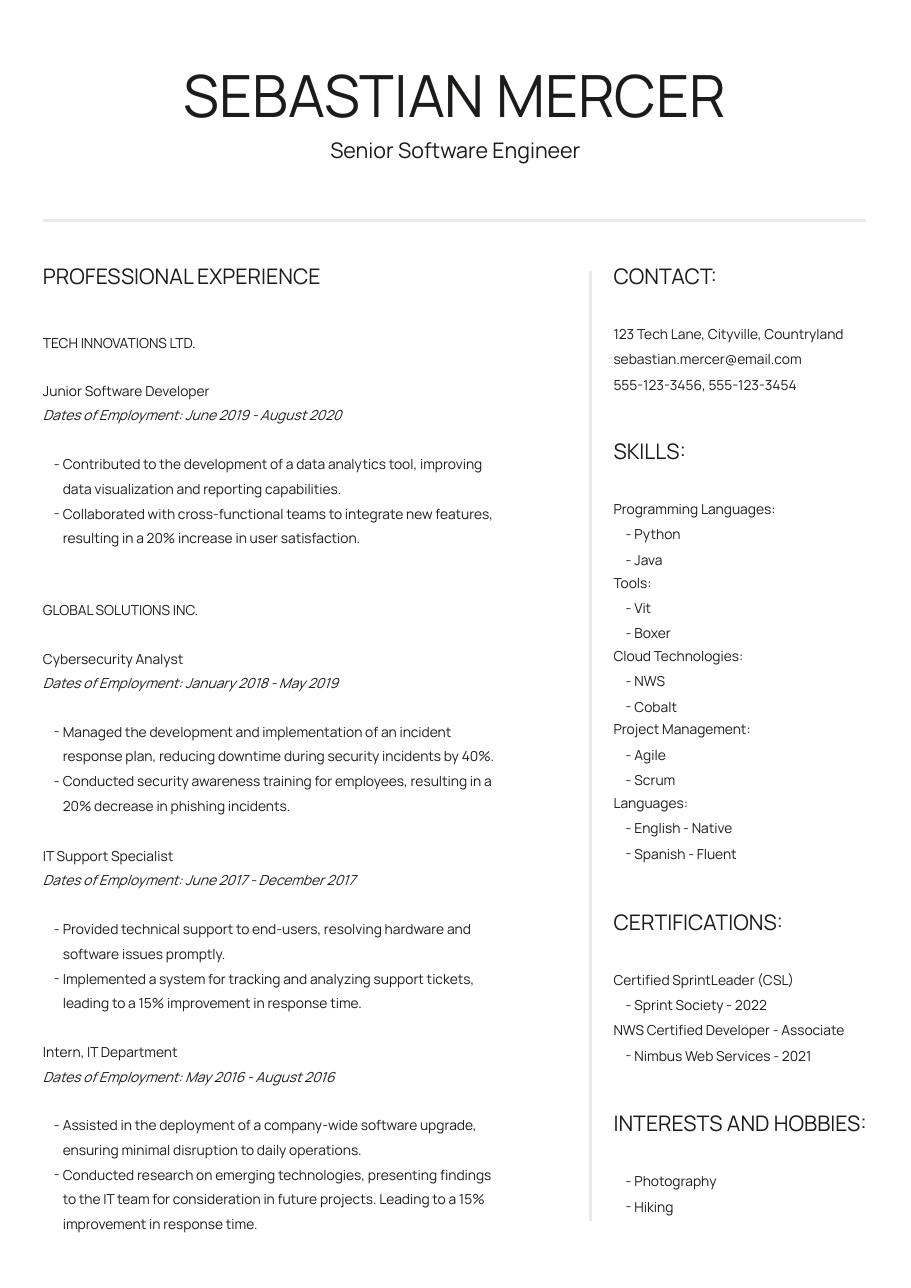
from dataclasses import dataclass

from lxml import etree
from pptx import Presentation
from pptx.dml.color import RGBColor
from pptx.enum.shapes import MSO_CONNECTOR
from pptx.enum.text import MSO_AUTO_SIZE, PP_ALIGN
from pptx.oxml.ns import qn
from pptx.util import Inches, Pt

STRAIGHT = MSO_CONNECTOR.STRAIGHT
GROW = MSO_AUTO_SIZE.SHAPE_TO_FIT_TEXT
LEFT, CENTER = PP_ALIGN.LEFT, PP_ALIGN.CENTER


@dataclass(frozen=True)
class Theme:
    font: str = "Manrope"
    ink: RGBColor = RGBColor(0x1B, 0x1B, 0x1A)
    rule: RGBColor = RGBColor(0xEA, 0xEA, 0xEA)
    rule_width: float = 1.5
    name_size: int = 38
    heading_size: int = 14
    body_size: int = 9
    body_spacing: float = 1.5


@dataclass(frozen=True)
class Job:
    top: float
    title: str
    dates: str
    duties: tuple[str, ...]
    duties_height: float = 0.83
    employer: str = ""


@dataclass(frozen=True)
class Skill:
    area: str
    items: tuple[str, ...]


THEME = Theme()

# Page grid in inches
MAIN_LEFT, MAIN_WIDTH = 0.39, 4.72
DUTY_LEFT, DUTY_WIDTH, DUTY_RIGHT_INSET = 0.49, 4.62, 0.57
SIDE_LEFT, SIDE_WIDTH = 5.57, 2.4
ITEM_LEFT, ITEM_WIDTH = 5.68, 1.98
HEADING_HEIGHT, LINE_HEIGHT = 0.24, 0.15
DASH_INDENT = 0.08
ROW_STEP = 0.23
SKILL_STEP = 2 / 3
EMPLOYER_OFFSET, DATES_OFFSET, DUTIES_OFFSET = -0.44, 0.22, 0.66

JOBS = (
    Job(3.4, "Junior Software Developer", "June 2019 - August 2020", (
        "Contributed to the development of a data analytics tool, improving "
        "data visualization and reporting capabilities.",
        "Collaborated with cross-functional teams to integrate new features, "
        "resulting in a 20% increase in user satisfaction."),
        employer="TECH INNOVATIONS LTD."),
    Job(5.83, "Cybersecurity Analyst", "January 2018 - May 2019", (
        "Managed the development and implementation of an incident "
        "response plan, reducing downtime during security incidents by 40%.",
        "Conducted security awareness training for employees, resulting in a "
        "20% decrease in phishing incidents."),
        employer="GLOBAL SOLUTIONS INC."),
    Job(7.62, "IT Support Specialist", "June 2017 - December 2017", (
        "Provided technical support to end-users, resolving hardware and "
        "software issues promptly.",
        "Implemented a system for tracking and analyzing support tickets, "
        "leading to a 15% improvement in response time.")),
    Job(9.4, "Intern, IT Department", "May 2016 - August 2016", (
        "Assisted in the deployment of a company-wide software upgrade, "
        "ensuring minimal disruption to daily operations.",
        "Conducted research on emerging technologies, presenting findings "
        "to the IT team for consideration in future projects. Leading to a 15% "
        "improvement in response time."),
        duties_height=1.06),
)

SECTIONS = (
    (2.39, "CONTACT:"),
    (3.98, "SKILLS:"),
    (8.25, "CERTIFICATIONS:"),
    (10.08, "INTERESTS AND HOBBIES:"),
)
CONTACT = (
    "123 Tech Lane, Cityville, Countryland",
    "sebastian.mercer@email.com",
    "555-123-3456, 555-123-3454",
)
SKILLS = (
    Skill("Programming Languages:", ("Python", "Java")),
    Skill("Tools:", ("Vit", "Boxer")),
    Skill("Cloud Technologies:", ("NWS", "Cobalt")),
    Skill("Project Management:", ("Agile", "Scrum")),
    Skill("Languages:", ("English - Native", "Spanish - Fluent")),
)
CERTIFICATIONS = (
    ("Certified SprintLeader (CSL)", "Sprint Society - 2022"),
    ("NWS Certified Developer - Associate", "Nimbus Web Services - 2021"),
)
HOBBIES = ("Photography", "Hiking")


def add_dash(paragraph) -> None:
    """Give a paragraph a dash bullet with a hanging indent."""
    properties = paragraph._p.get_or_add_pPr()
    properties.set("marL", str(Inches(DASH_INDENT)))
    properties.set("indent", str(-Inches(DASH_INDENT)))
    etree.SubElement(properties, qn("a:buFont")).set("typeface", THEME.font)
    etree.SubElement(properties, qn("a:buChar")).set("char", "-")


def add_text(slide, left: float, top: float, width: float, height: float,
             lines: tuple[str, ...], size: int = THEME.body_size,
             spacing: float = THEME.body_spacing, align=LEFT,
             italic: bool = False, dashed: bool = False,
             right_inset: float = 0) -> None:
    box = slide.shapes.add_textbox(
        Inches(left), Inches(top), Inches(width), Inches(height))
    frame = box.text_frame
    frame.margin_left = frame.margin_top = frame.margin_bottom = 0
    frame.margin_right = Inches(right_inset)
    frame.word_wrap = True
    frame.auto_size = GROW
    frame.text = "\n".join(lines)
    for paragraph in frame.paragraphs:
        paragraph.alignment = align
        paragraph.line_spacing = spacing
        if dashed:
            add_dash(paragraph)
        for run in paragraph.runs:
            run.font.name = THEME.font
            run.font.size = Pt(size)
            run.font.color.rgb = THEME.ink
            run.font.italic = italic


def add_heading(slide, left: float, top: float, width: float, text: str,
                align=LEFT) -> None:
    add_text(slide, left, top, width, HEADING_HEIGHT, (text,),
             size=THEME.heading_size, spacing=1.0, align=align)


def add_main_line(slide, top: float, text: str, italic: bool = False) -> None:
    add_text(slide, MAIN_LEFT, top, MAIN_WIDTH, LINE_HEIGHT, (text,), italic=italic)


def add_side_line(slide, top: float, text: str) -> None:
    add_text(slide, SIDE_LEFT, top, SIDE_WIDTH, LINE_HEIGHT, (text,))


def add_side_item(slide, top: float, text: str) -> None:
    add_text(slide, ITEM_LEFT, top, ITEM_WIDTH, LINE_HEIGHT, (text,), dashed=True)


def add_rule(slide, x1: float, y1: float, x2: float, y2: float) -> None:
    rule = slide.shapes.add_connector(
        STRAIGHT, Inches(x1), Inches(y1), Inches(x2), Inches(y2))
    rule.line.color.rgb = THEME.rule
    rule.line.width = Pt(THEME.rule_width)
    etree.SubElement(rule._element.spPr, qn("a:effectLst"))


def add_job(slide, job: Job) -> None:
    if job.employer:
        add_main_line(slide, job.top + EMPLOYER_OFFSET, job.employer)
    add_main_line(slide, job.top, job.title)
    add_main_line(slide, job.top + DATES_OFFSET,
                  f"Dates of Employment: {job.dates}", italic=True)
    add_text(slide, DUTY_LEFT, job.top + DUTIES_OFFSET, DUTY_WIDTH,
             job.duties_height, job.duties, dashed=True,
             right_inset=DUTY_RIGHT_INSET)


def main() -> None:
    prs = Presentation()
    prs.slide_width, prs.slide_height = Inches(8.27), Inches(11.69)
    slide = prs.slides.add_slide(prs.slide_layouts[6])

    # Header and rules
    add_text(slide, 1.34, 0.54, 5.58, 0.64, ("SEBASTIAN MERCER",),
             size=THEME.name_size, spacing=1.0, align=CENTER)
    add_heading(slide, 2.24, 1.24, 3.79, "Senior Software Engineer", CENTER)
    add_rule(slide, 0.39, 2, 7.86, 2)
    add_rule(slide, 5.36, 2.46, 5.36, 11.08)

    # Experience column
    add_heading(slide, MAIN_LEFT, 2.39, 3.28, "PROFESSIONAL EXPERIENCE")
    for job in JOBS:
        add_job(slide, job)

    # Side column
    for top, title in SECTIONS:
        add_heading(slide, SIDE_LEFT, top, SIDE_WIDTH, title)
    for row, detail in enumerate(CONTACT):
        add_side_line(slide, 2.88 + row * ROW_STEP, detail)
    for group, skill in enumerate(SKILLS):
        top = 4.47 + group * SKILL_STEP
        add_side_line(slide, top, skill.area)
        for row, item in enumerate(skill.items, start=1):
            add_side_item(slide, top + row * ROW_STEP, item)
    for row, (certificate, issuer) in enumerate(CERTIFICATIONS):
        top = 8.74 + 2 * row * ROW_STEP
        add_side_line(slide, top, certificate)
        add_side_item(slide, top + ROW_STEP, issuer)
    for row, hobby in enumerate(HOBBIES):
        add_side_item(slide, 10.57 + row * ROW_STEP, hobby)

    prs.save("out.pptx")


if __name__ == "__main__":
    main()
